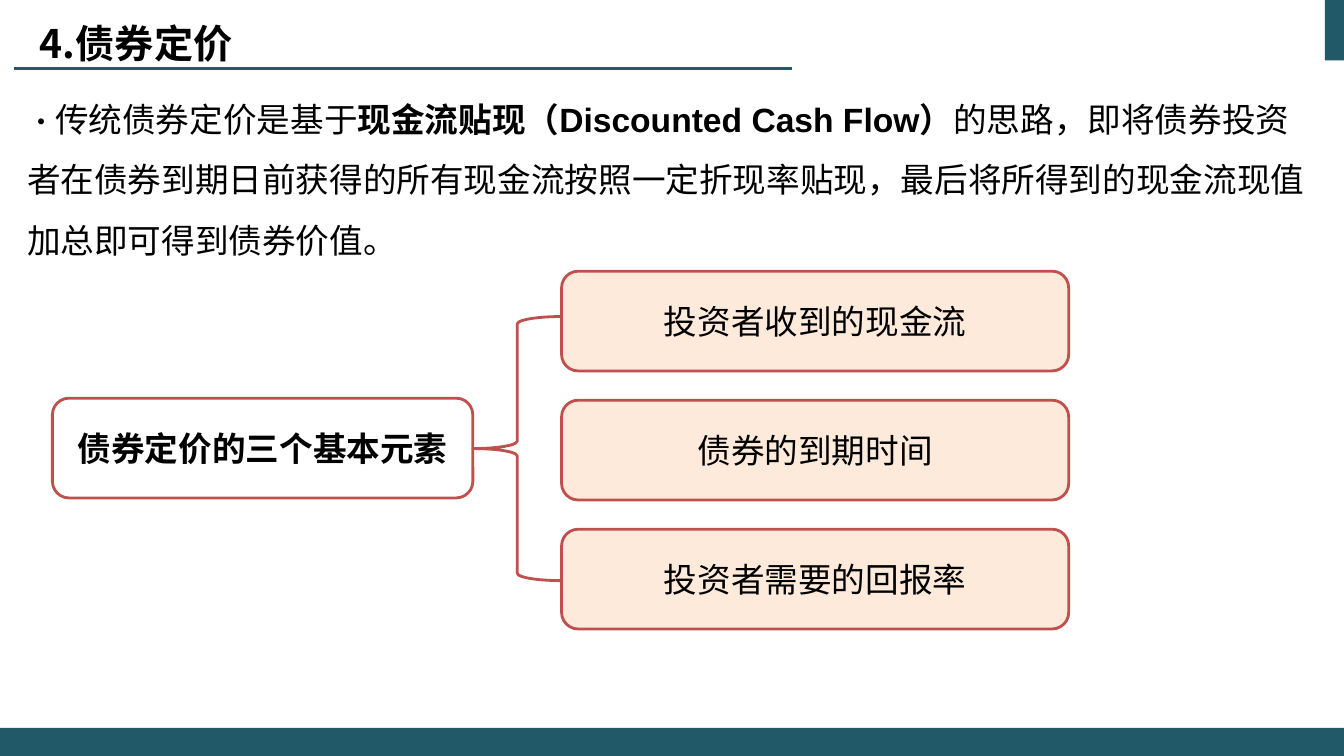
from lxml.etree import SubElement
from pptx import Presentation
from pptx.dml.color import RGBColor
from pptx.enum.shapes import MSO_CONNECTOR, MSO_SHAPE
from pptx.enum.text import MSO_ANCHOR, PP_ALIGN
from pptx.oxml.ns import qn
from pptx.util import Inches, Pt

THEME = {
    "teal": RGBColor.from_string("215968"),
    "red": RGBColor.from_string("C0504D"),
    "peach": RGBColor.from_string("FDEADA"),
    "white": RGBColor.from_string("FFFFFF"),
    "black": RGBColor.from_string("000000"),
    "cjk": "Noto Sans CJK SC",
    "title": {"name": "Noto Sans CJK SC", "size": Pt(28), "bold": True},
    "bullet": {"name": "Calibri", "size": Pt(20)},
    "body": {"name": "Arial", "size": Pt(24), "bold": False},
    "strong": {"name": "Arial", "size": Pt(24), "bold": True},
    "root": {"name": "Calibri", "size": Pt(24), "bold": True},
    "leaf": {"name": "Calibri", "size": Pt(24), "bold": False},
}
W, H = 13.33, 7.5


def add_block(kind, x, y, w, h, fill, line=None):
    sp = slide.shapes.add_shape(kind, Inches(x), Inches(y), Inches(w), Inches(h))
    sp.shadow.inherit = False
    sp.fill.solid()
    sp.fill.fore_color.rgb = THEME[fill]
    if line:
        sp.line.color.rgb = THEME[line]
        sp.line.width = Pt(2)
    else:
        sp.line.fill.background()
    return sp


def write(sp, runs, align=PP_ALIGN.CENTER, anchor=MSO_ANCHOR.MIDDLE):
    """Fill the first paragraph with (text, theme style) runs."""
    tf = sp.text_frame
    tf.word_wrap = True
    tf.vertical_anchor = anchor
    p = tf.paragraphs[0]
    p.alignment = align
    for text, style in runs:
        r = p.add_run()
        r.text = text
        for key, value in THEME[style].items():
            setattr(r.font, key, value)
        r.font.color.rgb = THEME["black"]
        rPr = r.font._element
        rPr.set("lang", "zh-CN")
        SubElement(rPr, qn("a:ea")).set("typeface", THEME["cjk"])
    return p


prs = Presentation()
prs.slide_width, prs.slide_height = Inches(W), Inches(H)
slide = prs.slides.add_slide(prs.slide_layouts[6])

# Frame: corner mark, title rule, footer band
add_block(MSO_SHAPE.RECTANGLE, W - 0.19, 0, 0.19, 0.6, "teal")
rule = slide.shapes.add_connector(
    MSO_CONNECTOR.STRAIGHT, Inches(7.86), Inches(0.68), Inches(0.14), Inches(0.68))
rule.line.color.rgb = THEME["teal"]
rule.line.width = Pt(1.5)
SubElement(rule._element.spPr, qn("a:effectLst"))
add_block(MSO_SHAPE.RECTANGLE, 0, H - 0.28, W, 0.28, "teal")

# Body and title
body = slide.shapes.add_textbox(Inches(0.17), Inches(0.73), Inches(12.99), Inches(1.95))
p = write(body, [
    ("•", "bullet"),
    ("传统债券定价是基于", "body"),
    ("现金流贴现（Discounted Cash Flow）", "strong"),
    ("的思路，即将债券投资者在债券到期日前获得的所有现金流按照一定折现率贴现，"
     "最后将所得到的现金流现值加总即可得到债券价值。", "body"),
], PP_ALIGN.LEFT, MSO_ANCHOR.TOP)
p.line_spacing = 1.5

title = slide.shapes.add_textbox(Inches(0.21), Inches(0.12), Inches(2.28), Inches(0.61))
write(title, [("4.债券定价", "title")])

# Tree: one root, a brace, three leaves at an equal pitch
BOX_H, PITCH, LEAF_TOP = 0.99, 1.28, 2.69
ROOT_X, ROOT_W, BRACE_W, LEAF_W = 0.52, 4.17, 0.88, 5.03
brace_x = ROOT_X + ROOT_W
leaf_x = brace_x + BRACE_W

root = add_block(MSO_SHAPE.ROUNDED_RECTANGLE, ROOT_X, 3.95, ROOT_W, BOX_H, "white", "red")
write(root, [("债券定价的三个基本元素", "root")])
add_block(MSO_SHAPE.LEFT_BRACE, brace_x, 3.14, BRACE_W, 2.62, "white", "red")
for row, label in enumerate(["投资者收到的现金流", "债券的到期时间", "投资者需要的回报率"]):
    leaf = add_block(MSO_SHAPE.ROUNDED_RECTANGLE, leaf_x, LEAF_TOP + row * PITCH,
                     LEAF_W, BOX_H, "peach", "red")
    write(leaf, [(label, "leaf")])

prs.save("out.pptx")
